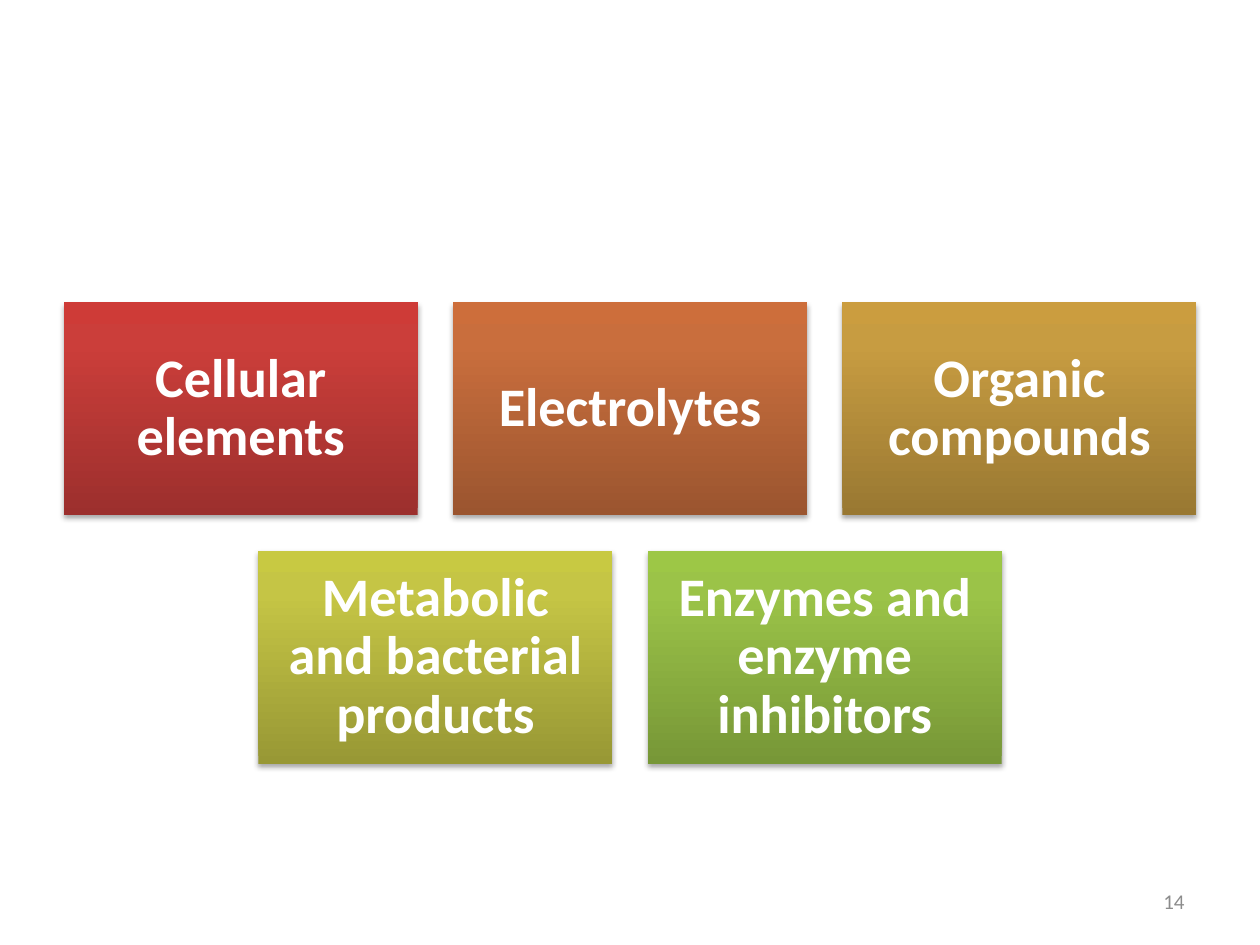
import copy
from dataclasses import dataclass

import pptx
import pptx.dml.color
import pptx.enum.shapes
import pptx.enum.text
import pptx.oxml
import pptx.oxml.ns
import pptx.util
from pptx.dml.color import RGBColor
from pptx.util import Inches, Pt

WHITE = RGBColor(0xFF, 0xFF, 0xFF)
GRAY = RGBColor(0x8C, 0x8C, 0x8C)
FONT = "Calibri"

SLIDE_WIDTH, SLIDE_HEIGHT = Inches(10), Inches(7.5)
CARD_WIDTH, CARD_HEIGHT = Inches(2.81), Inches(1.69)
CARD_GAP = Inches(0.28)
CARDS_TOP = Inches(2.4)
CARD_INSET = Inches(0.13)
STOP_POSITIONS = (0, 0.8, 1)

SHADOW_XML = (
    f'<a:outerShdw {pptx.oxml.ns.nsdecls("a")} blurRad="{Pt(3.1)}" dist="{Pt(1.8)}" '
    'dir="5400000" rotWithShape="0"><a:srgbClr val="000000">'
    '<a:alpha val="35000"/></a:srgbClr></a:outerShdw>'
)


@dataclass(frozen=True)
class Card:
    text: str
    colors: tuple[RGBColor, RGBColor, RGBColor]  # from bottom to top


CARD_ROWS = (
    (
        Card("Cellular elements", (RGBColor(0x9C, 0x2F, 0x2D), RGBColor(0xCB, 0x3E, 0x3A), RGBColor(0xCE, 0x3B, 0x37))),
        Card("Electrolytes", (RGBColor(0x9B, 0x55, 0x2F), RGBColor(0xC9, 0x6E, 0x3D), RGBColor(0xCD, 0x6E, 0x3B))),
        Card("Organic compounds", (RGBColor(0x99, 0x78, 0x32), RGBColor(0xC7, 0x9C, 0x41), RGBColor(0xCB, 0x9D, 0x3F))),
    ),
    (
        Card("Metabolic and bacterial products", (RGBColor(0x98, 0x98, 0x35), RGBColor(0xC5, 0xC5, 0x45), RGBColor(0xC8, 0xC9, 0x42))),
        Card("Enzymes and enzyme inhibitors", (RGBColor(0x77, 0x97, 0x37), RGBColor(0x9B, 0xC3, 0x48), RGBColor(0x9D, 0xC7, 0x46))),
    ),
)


def fill_gradient(shape, colors: tuple[RGBColor, ...]) -> None:
    shape.fill.gradient()
    shape.fill.gradient_angle = 90
    stop_list = shape._element.spPr.find(".//" + pptx.oxml.ns.qn("a:gsLst"))
    stop_list.append(copy.deepcopy(stop_list[0]))  # a new gradient has two stops
    for stop, position, color in zip(shape.fill.gradient_stops, STOP_POSITIONS, colors):
        stop.position = position
        stop.color.rgb = color


def add_shadow(shape) -> None:
    shape.shadow.inherit = False
    effects = shape._element.spPr.find(pptx.oxml.ns.qn("a:effectLst"))
    effects.append(pptx.oxml.parse_xml(SHADOW_XML))


def set_text(shape, text: str, size: float, color: RGBColor, bold: bool, alignment) -> None:
    frame = shape.text_frame
    frame.text = text
    frame.word_wrap = True
    frame.vertical_anchor = pptx.enum.text.MSO_ANCHOR.MIDDLE
    paragraph = frame.paragraphs[0]
    paragraph.alignment = alignment
    font = paragraph.runs[0].font
    font.name, font.size, font.bold = FONT, Pt(size), bold
    font.color.rgb = color


def add_card(slide, card: Card, left: int, top: int) -> None:
    shape = slide.shapes.add_shape(
        pptx.enum.shapes.MSO_SHAPE.RECTANGLE, left, top, CARD_WIDTH, CARD_HEIGHT
    )
    fill_gradient(shape, card.colors)
    shape.line.fill.background()
    add_shadow(shape)
    set_text(shape, card.text, 31, WHITE, True, pptx.enum.text.PP_ALIGN.CENTER)
    frame = shape.text_frame
    frame.margin_left = frame.margin_right = CARD_INSET
    frame.margin_top = frame.margin_bottom = CARD_INSET
    frame.paragraphs[0].line_spacing = 0.9


def main() -> None:
    presentation = pptx.Presentation()
    presentation.slide_width, presentation.slide_height = SLIDE_WIDTH, SLIDE_HEIGHT
    slide = presentation.slides.add_slide(presentation.slide_layouts[6])

    # Cards, each row centred on the slide
    for row, cards in enumerate(CARD_ROWS):
        row_width = len(cards) * (CARD_WIDTH + CARD_GAP) - CARD_GAP
        row_left = (SLIDE_WIDTH - row_width) // 2
        top = CARDS_TOP + row * (CARD_HEIGHT + CARD_GAP)
        for column, card in enumerate(cards):
            add_card(slide, card, row_left + column * (CARD_WIDTH + CARD_GAP), top)

    # Slide number
    number_box = slide.shapes.add_textbox(Inches(7.17), Inches(6.95), Inches(2.33), Inches(0.4))
    set_text(number_box, "14", 12, GRAY, False, pptx.enum.text.PP_ALIGN.RIGHT)

    presentation.save("out.pptx")


if __name__ == "__main__":
    main()
